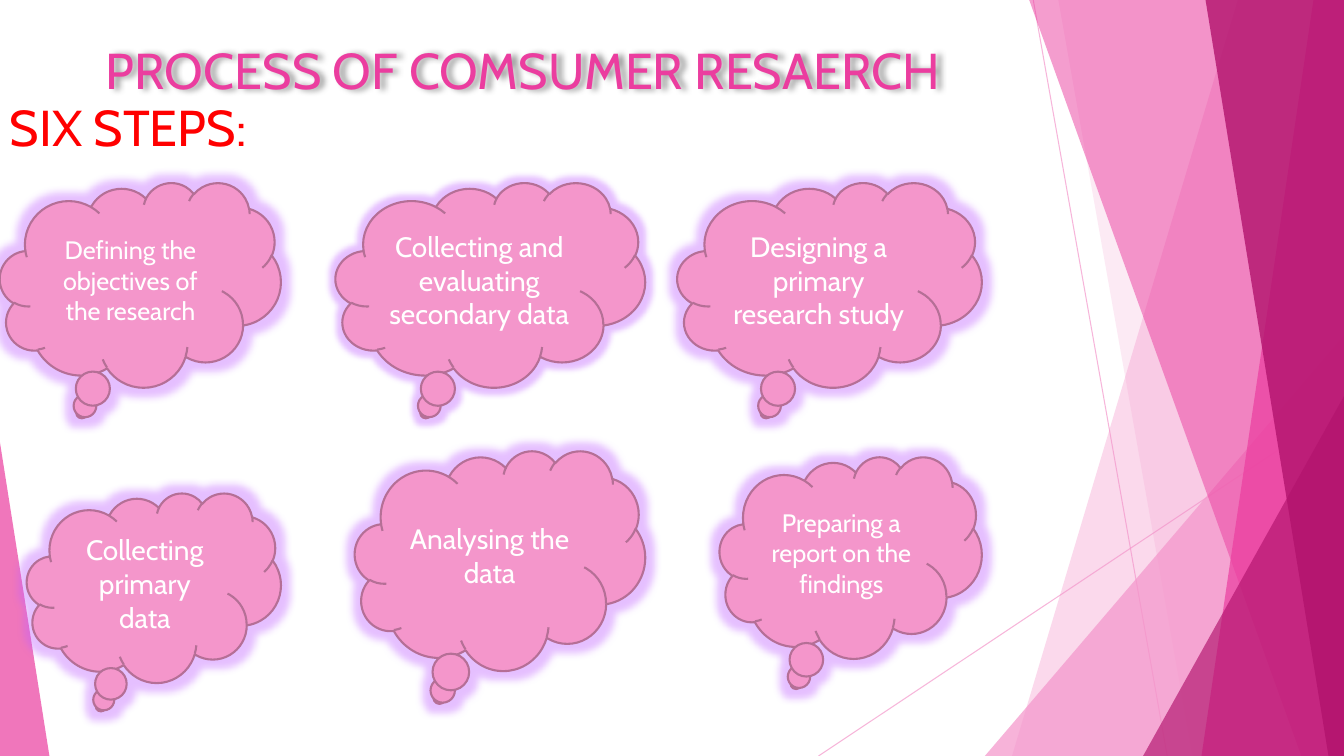
import pptx
import pptx.util
import pptx.dml.color
import pptx.enum.shapes
import pptx.enum.text
import pptx.oxml
import pptx.oxml.ns
from dataclasses import dataclass

WIDE = pptx.util.Inches(13.333)
HIGH = pptx.util.Inches(7.5)
SHAPE = pptx.enum.shapes.MSO_SHAPE
NS = pptx.oxml.ns.nsdecls("a")


@dataclass(frozen=True)
class Theme:
    font: str = "Cabin"
    pale: str = "F496CB"
    pink: str = "EB3D9F"
    deep: str = "B2136D"
    edge: str = "B56F96"
    glow: str = "C060FF"
    red: str = "FF0000"
    white: str = "FFFFFF"
    head: int = 36
    large: int = 20
    small: int = 18


THEME = Theme()


def across(share):
    """Percent of the slide's width."""
    return round(WIDE * share / 100)


def down(share):
    """Percent of the slide's height."""
    return round(HIGH * share / 100)


def color(code):
    return pptx.dml.color.RGBColor.from_string(code)


def fade(shape, alpha):
    """Set the opacity, in percent, of the one colour in use."""
    for tone in shape._element.spPr.iter(pptx.oxml.ns.qn("a:srgbClr")):
        tone.append(pptx.oxml.parse_xml(f'<a:alpha {NS} val="{alpha * 1000}"/>'))


def effect(shape, inner=""):
    """Replace the shape's effects; none when inner is empty."""
    props = shape._element.spPr
    for old in props.findall(pptx.oxml.ns.qn("a:effectLst")):
        props.remove(old)
    props.append(pptx.oxml.parse_xml(f"<a:effectLst {NS}>{inner}</a:effectLst>"))


def paint(shape, code, alpha):
    shape.fill.solid()
    shape.fill.fore_color.rgb = color(code)
    fade(shape, alpha)
    shape.line.fill.background()
    shape.shadow.inherit = False


def ray(slide, x1, y1, x2, y2):
    line = slide.shapes.add_connector(
        pptx.enum.shapes.MSO_CONNECTOR.STRAIGHT,
        across(x1), down(y1), across(x2), down(y2))
    line.line.color.rgb = color(THEME.pale)
    line.line.width = pptx.util.Pt(0.75)
    fade(line, 70)
    effect(line)


def panel(slide, top, base, code, alpha):
    """Slanted panel reaching the right edge of the slide."""
    pen = slide.shapes.build_freeform(across(top), 0, scale=1.0)
    pen.add_line_segments(
        [(WIDE, 0), (WIDE, HIGH), (across(base), HIGH)], close=True)
    paint(pen.convert_to_shape(), code, alpha)


def wedge(slide, left, top, right, peak, code, alpha):
    """Triangle standing on the slide's bottom; peak 0 is left, 1 right."""
    shape = slide.shapes.add_shape(
        SHAPE.ISOSCELES_TRIANGLE, across(left), down(top),
        across(right - left), down(100 - top))
    shape.adjustments[0] = peak
    paint(shape, code, alpha)


def write(shape, text, size, code):
    frame = shape.text_frame
    frame.word_wrap = True
    par = frame.paragraphs[0]
    par.text = text
    par.font.name = THEME.font
    par.font.size = pptx.util.Pt(size)
    par.font.color.rgb = color(code)
    return par


def label(slide, left, top, width, height, text, code):
    box = slide.shapes.add_textbox(
        across(left), down(top), across(width), down(height))
    write(box, text, THEME.head, code)
    return box


def cloud(slide, right, top, width, height, text, size, halo):
    """Thought cloud set against a column's right side; halo in points."""
    shape = slide.shapes.add_shape(
        SHAPE.CLOUD_CALLOUT, across(right - width), down(top),
        across(width), down(height))
    shape.fill.solid()
    shape.fill.fore_color.rgb = color(THEME.pale)
    shape.line.color.rgb = color(THEME.edge)
    shape.line.width = pptx.util.Pt(1.5)
    effect(shape, f'<a:glow rad="{pptx.util.Pt(halo)}"><a:srgbClr val="{THEME.glow}">'
                  '<a:alpha val="40000"/></a:srgbClr></a:glow>')
    shape.text_frame.vertical_anchor = pptx.enum.text.MSO_ANCHOR.MIDDLE
    par = write(shape, text, size, THEME.white)
    par.alignment = pptx.enum.text.PP_ALIGN.CENTER


def backdrop(slide):
    ray(slide, 76.88, 0, 86.85, 100)
    ray(slide, 100, 53.73, 60.9, 100)
    panel(slide, 92.1, 75.3, THEME.pale, 36)
    panel(slide, 78.75, 88.73, THEME.pale, 20)
    wedge(slide, 73.28, 44.4, 100, 1, THEME.pale, 72)
    panel(slide, 76.58, 96.83, THEME.pink, 50)
    panel(slide, 97.73, 89.4, THEME.pink, 70)
    panel(slide, 89.7, 98.85, THEME.deep, 80)
    wedge(slide, 85.05, 52.4, 100, 1, THEME.deep, 66)
    wedge(slide, 0, 58.53, 3.68, 0, THEME.pink, 70)


def main():
    deck = pptx.Presentation()
    deck.slide_width, deck.slide_height = WIDE, HIGH
    slide = deck.slides.add_slide(deck.slide_layouts[6])
    backdrop(slide)

    title = label(slide, 7.13, 4.53, 68.93, 14.93,
                  "PROCESS OF COMSUMER RESAERCH", THEME.pink)
    effect(title, '<a:outerShdw blurRad="50800" dist="38100" dir="0" algn="l">'
                  '<a:srgbClr val="000000"><a:alpha val="40000"/></a:srgbClr>'
                  '</a:outerShdw>')

    col1, col2, col3 = 20.9, 48, 73.05
    row, tall = 24.13, 27.07
    steps = [
        (col1, row, 20.9, tall, "Defining the objectives of the research", THEME.small, 11),
        (col2, row, 23.03, tall, "Collecting and evaluating secondary data", THEME.large, 8),
        (col3, row, 22.65, tall, "Designing a primary research study", THEME.large, 11),
        (col1, 65.2, 18.9, 25.07, "Collecting primary data", THEME.large, 11),
        (col2, 59.6, 21.6, 29.07, "Analysing the data", THEME.large, 11),
        (col3, 60.4, 19.5, 26.67, "Preparing a report on the findings", THEME.small, 11),
    ]
    for step in steps:
        cloud(slide, *step)

    label(slide, 0, 12, 77.25, 86.8, "SIX STEPS:", THEME.red)
    deck.save("out.pptx")


if __name__ == "__main__":
    main()
